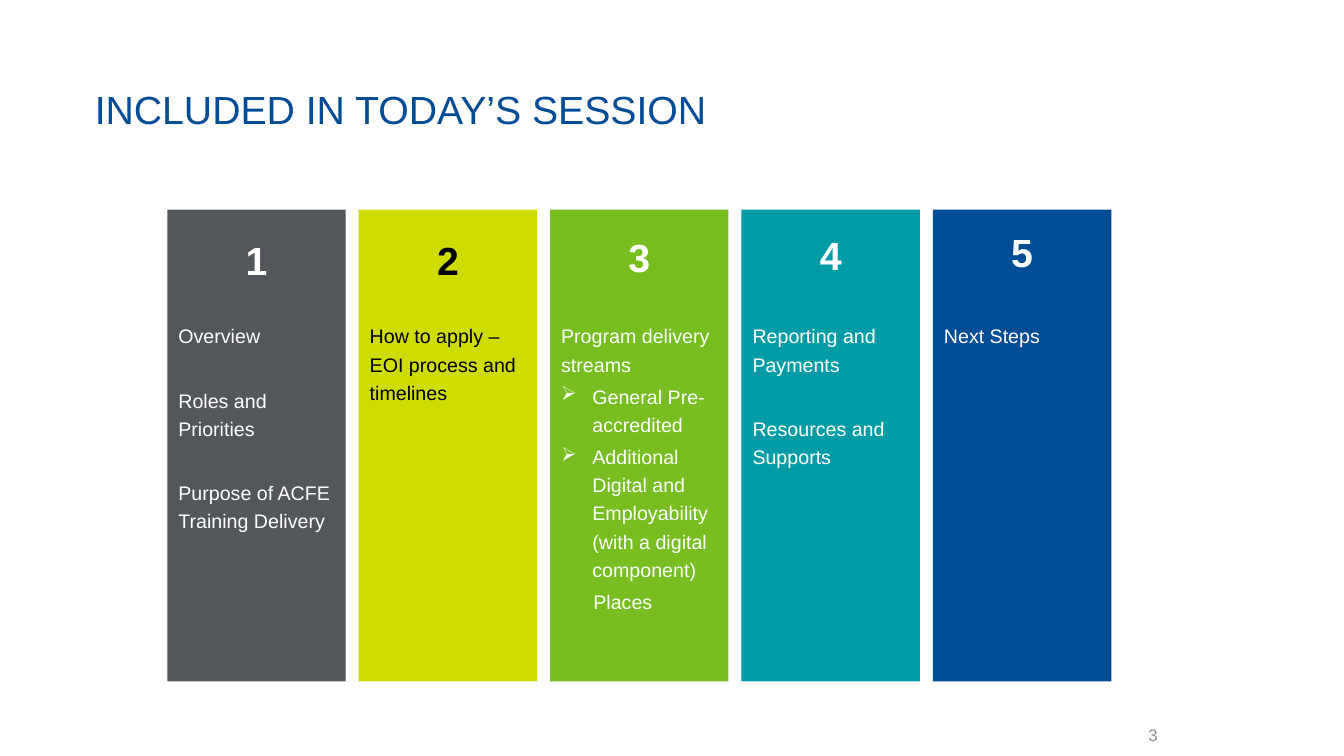
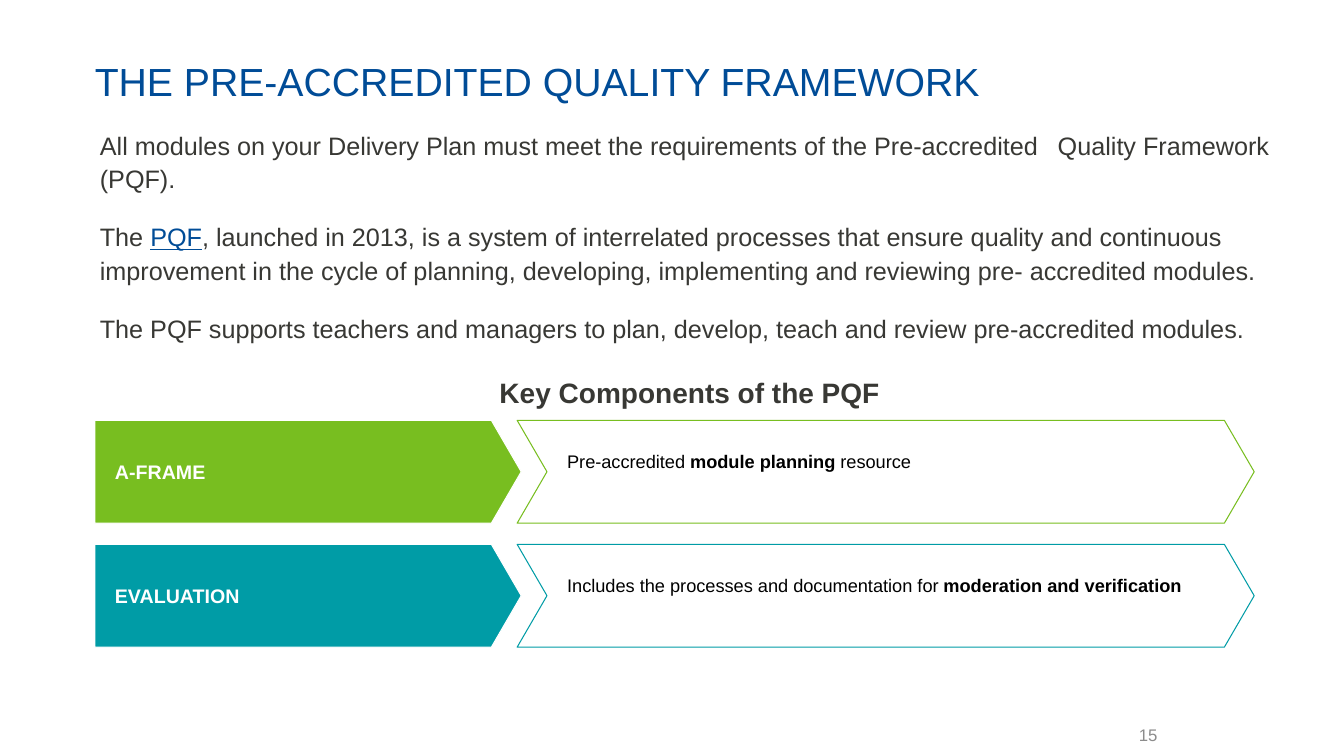
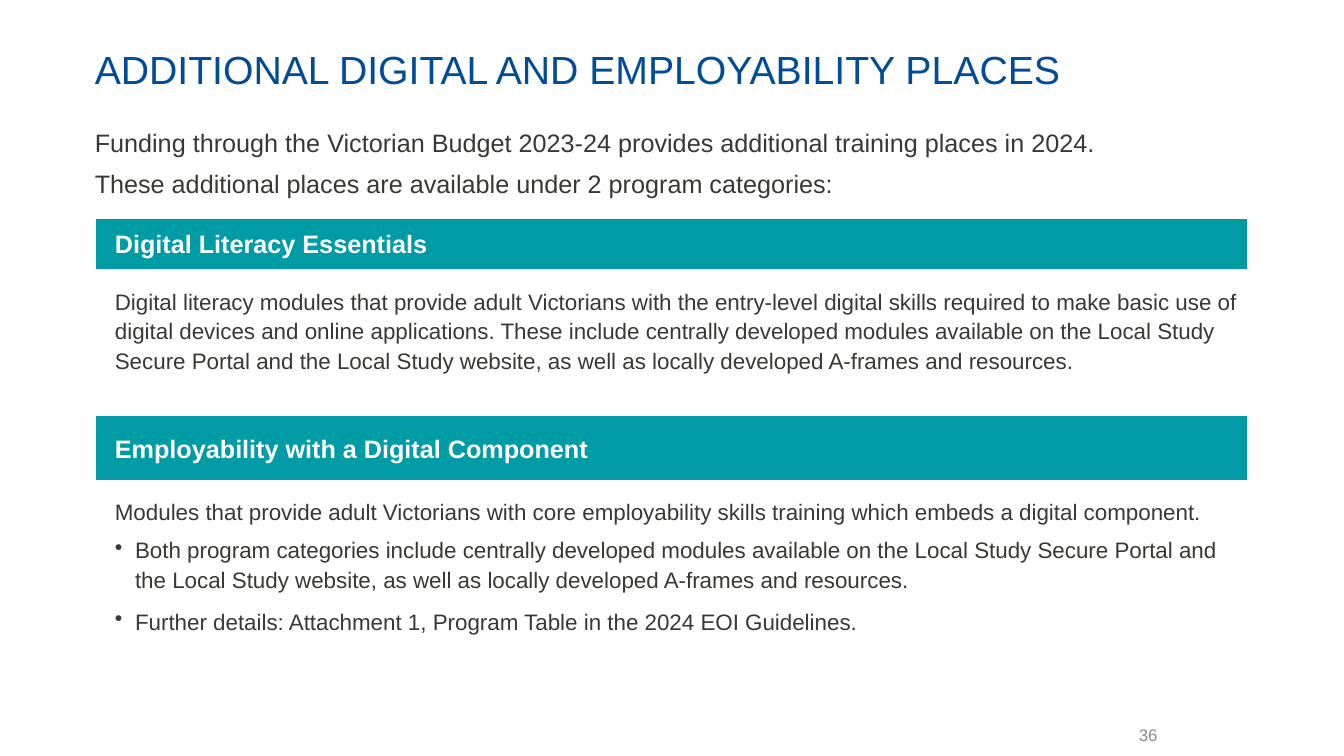
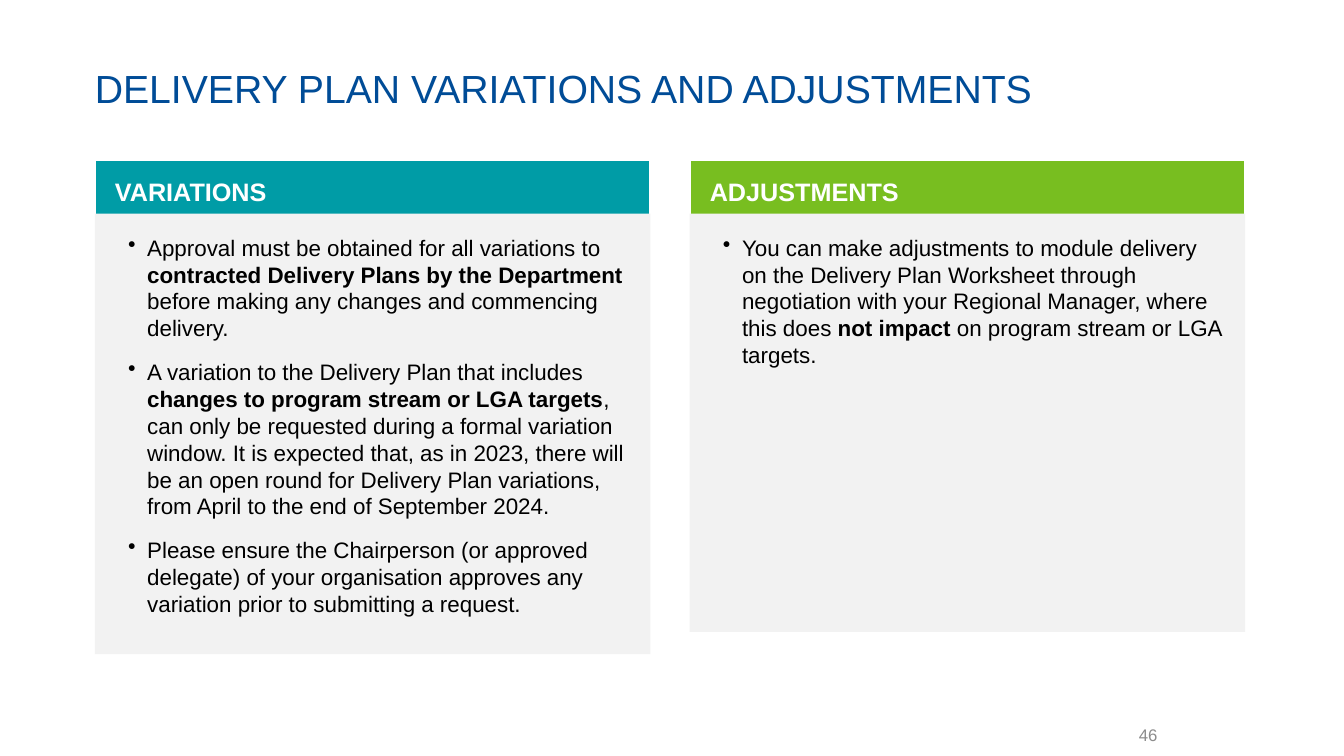
from collections import namedtuple

from lxml import etree
from pptx import Presentation
from pptx import util as u
from pptx.dml.color import RGBColor
from pptx.enum import shapes, text
from pptx.oxml import ns

COLORS = {
    "navy": "004C97", "teal": "009CA6", "green": "78BE20", "lime": "CEDC00",
    "slate": "53565A", "panel": "F2F2F2", "ink": "383834", "page": "8C8C8C",
    "white": "FFFFFF", "black": "000000",
}
FONT = "Arial"
SLIDE_WIDTH, SLIDE_HEIGHT = u.Inches(13.33), u.Inches(7.5)
COL, ROW = SLIDE_WIDTH / 100, SLIDE_HEIGHT / 100
MARGIN, CONTENT = 7.05, 85.52
PAD = 0.2

Box = namedtuple("Box", "left top width height")
SHAPE = shapes.MSO_SHAPE
ALIGN = text.PP_ALIGN
ANCHOR = text.MSO_ANCHOR


def rgb(name):
    return RGBColor.from_string(COLORS[name])


def emu(box):
    return (round(box.left * COL), round(box.top * ROW),
            round(box.width * COL), round(box.height * ROW))


def para(*runs, before=0, after=0, spacing=1.0, align=ALIGN.LEFT,
         indent=0, bullet=None, tab=None, **style):
    return dict(runs=runs, before=before, after=after, spacing=spacing,
                align=align, indent=indent, bullet=bullet, tab=tab, style=style)


def bold(words):
    return words, {"bold": True}


def add_mark(paragraph, indent, bullet, hang, tab):
    props = paragraph._p.get_or_add_pPr()
    props.set("marL", str(u.Inches(indent)))
    props.set("indent", str(-u.Inches(hang) if bullet else 0))
    if bullet:
        etree.SubElement(props, ns.qn("a:buChar"), char=bullet)
    else:
        etree.SubElement(props, ns.qn("a:buNone"))
    if tab:
        stops = etree.SubElement(props, ns.qn("a:tabLst"))
        etree.SubElement(stops, ns.qn("a:tab"), pos=str(u.Inches(tab)), algn="l")


def write(shape, paragraphs, size, color, insets=(0, 0, 0, 0),
          anchor=ANCHOR.TOP, hang=0.2):
    frame = shape.text_frame
    frame.word_wrap = True
    frame.auto_size = text.MSO_AUTO_SIZE.NONE
    frame.vertical_anchor = anchor
    (frame.margin_left, frame.margin_top,
     frame.margin_right, frame.margin_bottom) = map(u.Inches, insets)
    for index, item in enumerate(paragraphs):
        paragraph = frame.add_paragraph() if index else frame.paragraphs[0]
        add_mark(paragraph, item["indent"], item["bullet"], hang, item["tab"])
        paragraph.alignment = item["align"]
        paragraph.line_spacing = item["spacing"]
        paragraph.space_before = u.Pt(item["before"] if index else 0)
        paragraph.space_after = u.Pt(item["after"])
        for part in item["runs"]:
            words, change = (part, {}) if isinstance(part, str) else part
            style = {"size": size, "color": color, **item["style"], **change}
            run = paragraph.add_run()
            run.text = words
            run.font.name = FONT
            run.font.size = u.Pt(style["size"])
            run.font.color.rgb = rgb(style["color"])
            run.font.bold = style.get("bold", False)
            run.font.underline = style.get("underline", False)


def add_text(slide, box, paragraphs, size, color, **options):
    write(slide.shapes.add_textbox(*emu(box)), paragraphs, size, color, **options)


def add_block(slide, box, fill, line=None, weight=1.5, kind=SHAPE.RECTANGLE, point=None):
    block = slide.shapes.add_shape(kind, *emu(box))
    block.shadow.inherit = False
    block.fill.solid()
    block.fill.fore_color.rgb = rgb(fill)
    if line:
        block.line.color.rgb = rgb(line)
        block.line.width = u.Pt(weight)
    else:
        block.line.fill.background()
    if point:
        block.adjustments[0] = point
    return block


def add_slide(deck, title, top, page):
    slide = deck.slides.add_slide(deck.slide_layouts[5])
    heading = slide.shapes.title
    heading.left, heading.top, heading.width, heading.height = emu(
        Box(MARGIN, top, CONTENT, 8))
    write(heading, [para(title, spacing=0.9)], 28, "navy")
    add_text(slide, Box(64.37, 94.53, 22.5, 5.2), [para(page, align=ALIGN.RIGHT)],
             12, "page", insets=(0.1, 0.05, 0.1, 0.05), anchor=ANCHOR.MIDDLE)
    return slide


def agenda_column(slide, box, number, number_drop, fill, color, topics):
    inset, body_drop = 0.82, 14.53
    left, width = box.left + inset, box.width - 2 * inset
    add_block(slide, box, fill)
    add_text(slide, Box(left, box.top + number_drop, width, 8),
             [para(number, align=ALIGN.CENTER)], 28, color=color_of(number, color))
    add_text(slide, Box(left, box.top + body_drop, width, box.height - body_drop),
             topics, 14, color, hang=0.31)


def color_of(number, color):
    return color


def agenda_slide(deck):
    slide = add_slide(deck, "INCLUDED IN TODAY’S SESSION", 12, "3")

    def topic(words, before=25.7, **options):
        return para(words, before=before, spacing=1.2, **options)

    columns = [
        (3.47, "slate", "white", [topic("Overview"), topic("Roles and Priorities"),
                                  topic("Purpose of ACFE Training Delivery")]),
        (3.47, "lime", "black", [topic("How to apply – EOI process and timelines")]),
        (3.07, "green", "white", [
            topic("Program delivery streams"),
            topic("General Pre-accredited", 2.8, indent=0.31, bullet="➢"),
            topic("Additional Digital and Employability (with a digital component)",
                  2.8, indent=0.31, bullet="➢"),
            topic("Places", 2.8, indent=0.32)]),
        (2.93, "teal", "white", [topic("Reporting and Payments"),
                                 topic("Resources and Supports")]),
        (2.53, "navy", "white", [topic("Next Steps")]),
    ]
    for index, (drop, fill, color, topics) in enumerate(columns):
        box = Box(12.45 + index * 14.24, 27.73, 13.28, 62.4)
        agenda_column(slide, box, (str(index + 1), {"bold": True}), drop, fill, color, topics)


def component_row(slide, box, name, color, details):
    label_width, overlap = 31.73, 0.3
    label = add_block(slide, box._replace(width=label_width), color, "white", 0.75,
                      SHAPE.PENTAGON, 0.29)
    write(label, [para(bold(name))], 14, "white", (PAD,) * 4, ANCHOR.MIDDLE)
    offset = label_width - overlap
    detail = add_block(slide, box._replace(left=box.left + offset, width=box.width - offset),
                       "white", color, 0.75, SHAPE.CHEVRON, 0.29)
    write(detail, [para(*details)], 13, "black", (PAD, PAD, PAD, 2 * PAD), ANCHOR.MIDDLE)


def framework_slide(deck):
    slide = add_slide(deck, "THE PRE-ACCREDITED QUALITY FRAMEWORK", 8.27, "15")
    layout = dict(spacing=1.1, before=6, after=12)
    add_text(slide, Box(7.43, 16.8, 87.77, 31.07), [
        para("All modules on your Delivery Plan must meet the requirements of the "
             "Pre-accredited\tQuality Framework (PQF).", tab=10.62, **layout),
        para("The ", ("PQF", {"color": "navy", "underline": True}),
             ", launched in 2013, is a system of interrelated processes that ensure "
             "quality and continuous improvement in the cycle of planning, developing, "
             "implementing and reviewing pre- accredited modules.", **layout),
        para("The PQF supports teachers and managers to plan, develop, teach and "
             "review pre-accredited modules.", **layout),
        para(bold("Key Components of the PQF"), size=20, align=ALIGN.CENTER,
             **{**layout, "before": 8}),
    ], 18, "ink")
    components = [
        ("A-FRAME", "green",
         ["Pre-accredited ", bold("module planning "), "resource"]),
        ("EVALUATION", "teal",
         ["Includes the processes and documentation for ",
          bold("moderation and verification")]),
    ]
    for index, component in enumerate(components):
        component_row(slide, Box(MARGIN, 55.6 + index * 16.4, 86.27, 13.6), *component)


def heading_bar(slide, box, words, fill, bottom=PAD):
    bar = add_block(slide, box, fill, "white")
    write(bar, [para(bold(words))], 18, "white", (PAD, PAD, PAD, bottom), ANCHOR.MIDDLE)


def category_section(slide, box, bar_height, name, details):
    heading_bar(slide, box._replace(height=bar_height), name, "teal")
    drop = bar_height + 2
    add_text(slide, Box(box.left, box.top + drop, CONTENT, box.height - drop),
             details, 16, "ink")


def places_slide(deck):
    slide = add_slide(deck, "ADDITIONAL DIGITAL AND EMPLOYABILITY PLACES", 6.67, "36")
    width = 85.82
    add_text(slide, Box(MARGIN, 16.4, width, 11.07), [
        para("Funding through the Victorian Budget 2023-24 provides additional "
             "training places in 2024.", spacing=1.1),
        para("These additional places are available under 2 program categories:",
             spacing=1.1, before=6, after=6),
    ], 18, "ink")
    category_section(slide, Box(MARGIN, 28.8, width, 25.47), 6.93,
                     "Digital Literacy Essentials", [
        para("Digital literacy modules that provide adult Victorians with the "
             "entry-level digital skills required to make basic use of digital devices "
             "and online applications. These include centrally developed modules "
             "available on the Local Study Secure Portal and the Local Study website, "
             "as well as locally developed A-frames and resources.",
             spacing=1.1, after=12, indent=0.2)])
    category_section(slide, Box(MARGIN, 54.93, width, 34.4), 8.67,
                     "Employability with a Digital Component", [
        para("Modules that provide adult Victorians with core employability skills "
             "training which embeds a digital component.", spacing=1.1, indent=0.2),
        para("Both program categories include centrally developed modules available on "
             "the Local Study Secure Portal and the Local Study website, as well as "
             "locally developed A-frames and resources.",
             spacing=1.1, before=6, after=3, indent=0.4, bullet="•"),
        para("Further details: Attachment 1, Program Table in the 2024 EOI Guidelines.",
             spacing=1.1, before=6, indent=0.4, bullet="•")])


def change_panel(slide, box, name, color, points):
    bar_height, drop, bottom = 7.73, 7.07, 0.16
    heading_bar(slide, box._replace(height=bar_height), name, color, bottom)
    panel = add_block(slide, box._replace(top=box.top + drop, height=box.height - drop),
                      "panel")
    write(panel, [para(*runs, before=6, after=6, indent=0.32, bullet="•")
                  for runs in points],
          16, "black", (PAD, PAD, PAD, bottom), hang=0.19)


def changes_slide(deck):
    slide = add_slide(deck, "DELIVERY PLAN VARIATIONS AND ADJUSTMENTS", 9.2, "46")
    panels = [
        (65.33, "VARIATIONS", "teal", [
            ["Approval must be obtained for all variations to ",
             bold("contracted Delivery Plans by the Department "),
             "before making any changes and commencing delivery."],
            ["A variation to the Delivery Plan that includes ",
             bold("changes to program stream or LGA targets"),
             ", can only be requested during a formal variation window. It is expected "
             "that, as in 2023, there will be an open round for Delivery Plan "
             "variations, from April to the end of September 2024."],
            ["Please ensure the Chairperson (or approved delegate) of your organisation "
             "approves any variation prior to submitting a request."]]),
        (62.4, "ADJUSTMENTS", "green", [
            ["You can make adjustments to module delivery on the Delivery Plan Worksheet "
             "through negotiation with your Regional Manager, where this does ",
             bold("not impact "), "on program stream or LGA targets."]]),
    ]
    for index, (height, *content) in enumerate(panels):
        change_panel(slide, Box(MARGIN + index * 44.26, 21.2, 41.34, height), *content)


def main():
    deck = Presentation()
    deck.slide_width, deck.slide_height = SLIDE_WIDTH, SLIDE_HEIGHT
    for build in (agenda_slide, framework_slide, places_slide, changes_slide):
        build(deck)
    deck.save("out.pptx")


if __name__ == "__main__":
    main()
